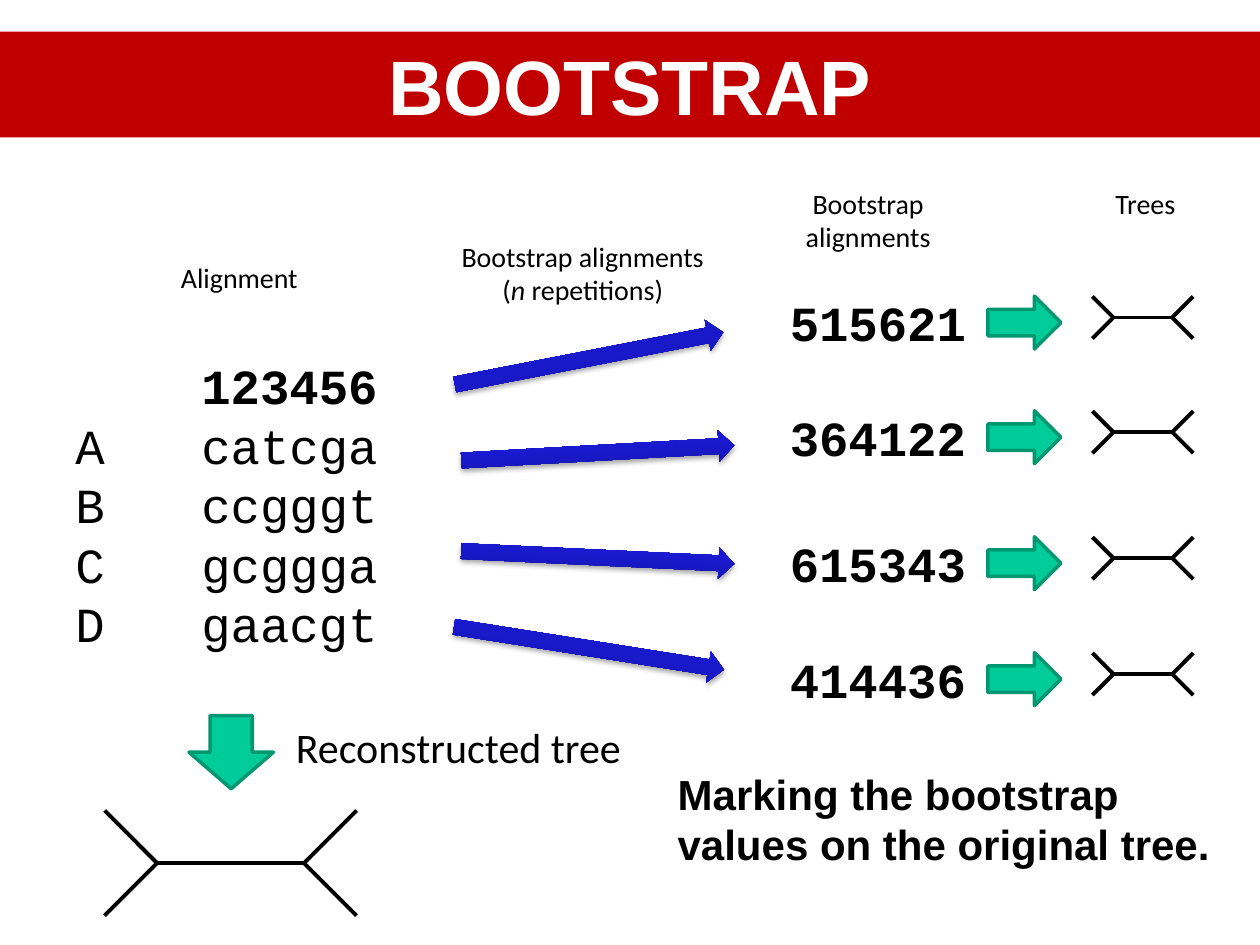
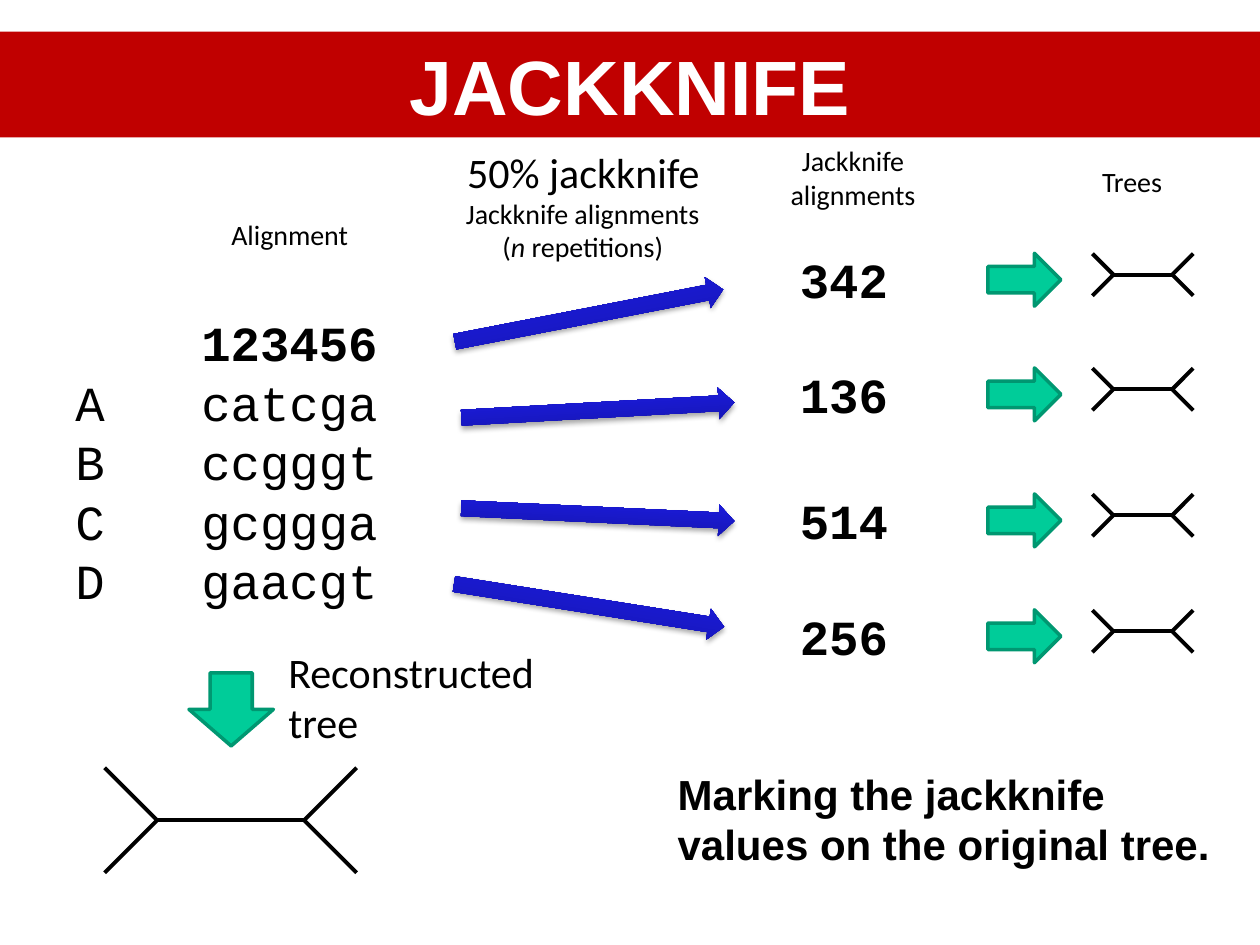
import pptx
import pptx.util
import pptx.dml.color
import pptx.enum.shapes
import pptx.enum.text
import pptx.oxml
import pptx.oxml.ns
from lxml import etree

Inches, Pt = pptx.util.Inches, pptx.util.Pt
SHAPE = pptx.enum.shapes.MSO_SHAPE
ALIGN = pptx.enum.text.PP_ALIGN
qn = pptx.oxml.ns.qn

RED, WHITE, BLACK = "C00000", "FFFFFF", "000000"
GREEN, DARK_GREEN = "00CC99", "009771"
BLUE_STOPS = [(0, "1515A9"), (80, "1B1BDC"), (100, "1818E1")]

# Each paragraph is a list of (text, style) runs; "b" is bold, "i" italic.
ALIGNMENT = [
    [("\t", ""), ("123456", "b")],
    [("A\tcatcga", "")],
    [("B\tccgggt", "")],
    [("C\tgcggga", "")],
    [("D\tgaacgt", "")],
]
REPETITIONS = [("(", ""), ("n ", "i"), ("repetitions)", "")]

# Boxes are left, top, width, height in inches. "rise" lifts the whole diagram.
METHODS = [
    {
        "title": "BOOTSTRAP",
        "rise": 0,
        "samples": ["515621", "364122", "615343", "414436"],
        "sample_left": 6.17, "sample_width": 1.61,
        "labels": [
            ("Bootstrap alignments", REPETITIONS, (3.55, 1.85, 2.15, 0.64)),
            ("Alignment", None, (1.33, 2.02, 1.14, 0.37)),
            ("Bootstrap", [("alignments", "")], (6.29, 1.43, 1.2, 0.64)),
            ("Trees", None, (8.75, 1.43, 0.68, 0.37)),
        ],
        "notes": [("Reconstructed tree", (2.25, 5.68, 2.81, 0.51))],
        "conclusion": "Marking the bootstrap values on the original tree.",
    },
    {
        "title": "JACKKNIFE",
        "rise": 0.34,
        "samples": ["342", "136", "514", "256"],
        "sample_left": 6.25, "sample_width": 0.91,
        "labels": [
            ("Jackknife alignments", REPETITIONS, (3.59, 1.51, 2.07, 0.64)),
            ("Alignment", None, (1.73, 1.68, 1.14, 0.37)),
            ("Jackknife", [("alignments", "")], (6.16, 1.09, 1.22, 0.64)),
            ("Trees", None, (8.64, 1.26, 0.69, 0.37)),
        ],
        "notes": [
            ("Reconstructed\ntree", (2.19, 5.08, 2.17, 0.91)),
            ("50% jackknife", (3.61, 1.11, 2.06, 0.51)),
        ],
        "conclusion": "Marking the jackknife values on the original tree.",
    },
]
SAMPLE_TOPS = [2.27, 3.18, 4.18, 5.1]
RESAMPLING_ARROWS = [(3.59, 2.72, -11), (3.66, 3.47, -3.2),
                     (3.66, 4.3, 2.7), (3.59, 5.02, 9)]  # left, top, rotation


def rgb(color):
    return pptx.dml.color.RGBColor.from_string(color)


def place(box):
    return [Inches(length) for length in box]


def write(frame, paragraphs, size, font, color=BLACK, bold=False,
          align=None, line_points=None, tab=None):
    """Fill a text frame with a plain string or with lists of styled runs."""
    if isinstance(paragraphs, str):
        paragraphs = [[(paragraphs, "")]]
    for index, runs in enumerate(paragraphs):
        paragraph = frame.add_paragraph() if index else frame.paragraphs[0]
        paragraph.alignment = align
        if line_points:
            paragraph.line_spacing = Pt(line_points)
        if tab:
            stops = etree.SubElement(paragraph._p.get_or_add_pPr(), qn("a:tabLst"))
            etree.SubElement(stops, qn("a:tab"), pos=str(Inches(tab)), algn="l")
        for text, style in runs:
            for part, line in enumerate(text.split("\n")):
                if part:
                    paragraph.add_line_break()
                run = paragraph.add_run()
                run.text = line
                run.font.size, run.font.name = Pt(size), font
                run.font.bold = bold or style == "b"
                run.font.italic = style == "i"
                run.font.color.rgb = rgb(color)


def add_text(slide, paragraphs, box, wrap=False, **text_format):
    frame = slide.shapes.add_textbox(*place(box)).text_frame
    frame.word_wrap = wrap
    frame.auto_size = pptx.enum.text.MSO_AUTO_SIZE.SHAPE_TO_FIT_TEXT
    write(frame, paragraphs, **text_format)


def add_title(slide, text):
    title = slide.shapes.title
    title.left, title.top, title.width, title.height = place((0, 0.25, 10, 0.84))
    title.fill.solid()
    title.fill.fore_color.rgb = rgb(RED)
    title.text_frame.auto_size = pptx.enum.text.MSO_AUTO_SIZE.NONE
    title.text_frame.vertical_anchor = pptx.enum.text.MSO_ANCHOR.MIDDLE
    write(title.text_frame, text, size=44, font="Arial", color=WHITE,
          bold=True, align=ALIGN.CENTER)


def add_green_arrow(slide, box, rotation=0):
    arrow = slide.shapes.add_shape(SHAPE.DOWN_ARROW, *place(box))
    arrow.rotation = rotation
    arrow.shadow.inherit = False
    arrow.fill.solid()
    arrow.fill.fore_color.rgb = rgb(GREEN)
    arrow.line.color.rgb = rgb(DARK_GREEN)
    arrow.line.width = Pt(2)


def add_resampling_arrow(slide, left, top, rotation):
    arrow = slide.shapes.add_shape(SHAPE.RIGHT_ARROW, *place((left, top, 2.17, 0.25)))
    arrow.rotation = rotation
    arrow.line.fill.background()
    arrow.shadow.inherit = False
    properties = arrow._element.spPr
    stops = "".join(f'<a:gs pos="{position * 1000}"><a:srgbClr val="{color}"/></a:gs>'
                    for position, color in BLUE_STOPS)
    namespace = pptx.oxml.ns.nsdecls("a")
    gradient = pptx.oxml.parse_xml(
        f'<a:gradFill {namespace} rotWithShape="1"><a:gsLst>{stops}</a:gsLst>'
        '<a:lin ang="16200000" scaled="0"/></a:gradFill>')
    properties.find(qn("a:prstGeom")).addnext(gradient)
    properties.find(qn("a:effectLst")).append(pptx.oxml.parse_xml(
        f'<a:outerShdw {namespace} blurRad="{Pt(3.1)}" dist="{Pt(1.8)}" dir="5400000" '
        'rotWithShape="0"><a:srgbClr val="000000"><a:alpha val="35000"/></a:srgbClr>'
        '</a:outerShdw>'))


def add_tree(shapes, left, middle, scale=1):
    """Draw a four-leaf unrooted tree, two inches wide at scale 1."""
    arm, right = 0.417 * scale, left + 2 * scale
    left_node, right_node = (left + arm, middle), (right - arm, middle)
    branches = [(left_node, right_node)]
    for leaf_y in (middle - arm, middle + arm):
        branches += [((left, leaf_y), left_node), (right_node, (right, leaf_y))]
    for start, end in branches:
        branch = shapes.add_connector(pptx.enum.shapes.MSO_CONNECTOR.STRAIGHT,
                                      *place(start + end))
        branch.line.color.rgb = rgb(BLACK)
        branch.line.width = Pt(2.25)
        etree.SubElement(branch._element.spPr, qn("a:effectLst"))


def build_slide(deck, method):
    slide = deck.slides.add_slide(deck.slide_layouts[5])
    rise = method["rise"]
    add_title(slide, method["title"])

    add_text(slide, ALIGNMENT, (0.5, 2.77 - rise, 2.62, 2.46), size=28,
             font="Courier New", line_points=34, tab=1)
    add_green_arrow(slide, (1.5, 5.68 - rise, 0.67, 0.58))
    add_tree(slide.shapes, 0.83, 6.85 - rise)

    for left, top, rotation in RESAMPLING_ARROWS:
        add_resampling_arrow(slide, left, top - rise, rotation)
    for sample, sample_top in zip(method["samples"], SAMPLE_TOPS):
        top = sample_top - rise
        add_text(slide, sample, (method["sample_left"], top, method["sample_width"], 0.57),
                 size=28, font="Courier New", bold=True, line_points=34)
        add_green_arrow(slide, (7.92, top, 0.42, 0.58), rotation=270)
        add_tree(slide.shapes.add_group_shape().shapes, 8.67, top + 0.25, scale=0.4)

    for heading, second_line, box in method["labels"]:
        paragraphs = [[(heading, "")]] + ([second_line] if second_line else [])
        add_text(slide, paragraphs, box, size=16, font="Calibri", align=ALIGN.CENTER)
    for note, box in method["notes"]:
        add_text(slide, note, box, size=24, font="Calibri")
    add_text(slide, method["conclusion"], (5.28, 6.05, 4.71, 1.31), wrap=True,
             size=24, font="Arial", bold=True)


def main():
    deck = pptx.Presentation()
    deck.slide_width, deck.slide_height = Inches(10), Inches(7.5)
    for method in METHODS:
        build_slide(deck, method)
    deck.save("out.pptx")


if __name__ == "__main__":
    main()
